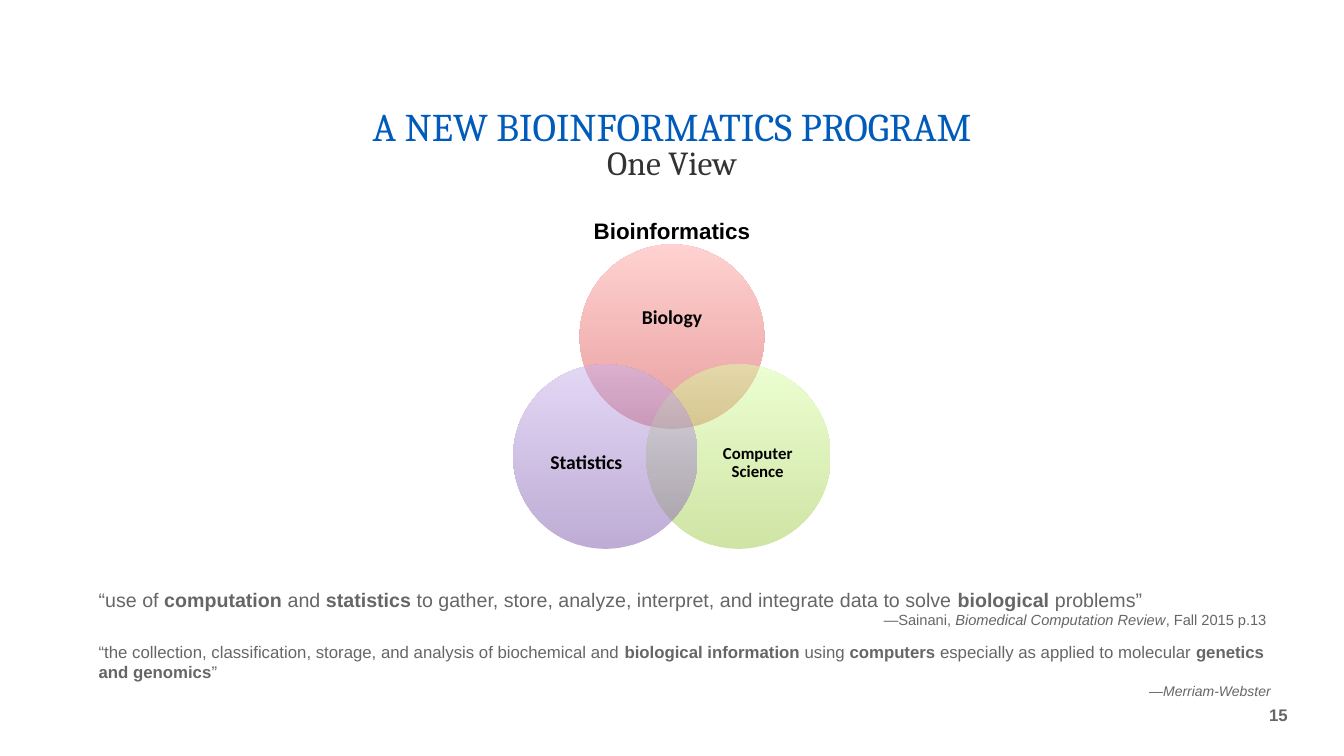
from lxml.etree import SubElement
from pptx import Presentation
from pptx.dml.color import RGBColor
from pptx.enum.shapes import MSO_SHAPE as SHAPE
from pptx.enum.text import MSO_ANCHOR as ANCHOR, PP_ALIGN as ALIGN
from pptx.oxml.ns import qn
from pptx.util import Inches, Pt

W, H = 13.33, 7.5
COLORS = {"title": "005BBB", "subtitle": "333333", "body": "666666", "black": "000000"}

# Content: a run is (text, style), style being "", "b" or "i"
TITLE = [("A NEW BIOINFORMATICS PROGRAM", 28, "title"), ("One View", 24, "subtitle")]
HEADING = "Bioinformatics"
PAGE = "15"
QUOTES = [
    # top, height, quote size, quote runs, source size, source runs
    (5.78, 0.52, 14,
     [("“use of ", ""), ("computation", "b"), (" and ", ""), ("statistics", "b"),
      (" to gather, store, analyze, interpret, and integrate data to solve ", ""),
      ("biological", "b"), (" problems”", "")],
     10.5,
     [("—Sainani, ", ""), ("Biomedical Computation Review", "i"), (", Fall 2015 p.13 ", "")]),
    (6.32, 0.68, 12,
     [("“the collection, classification, storage, and analysis of biochemical and ", ""),
      ("biological information", "b"), (" using ", ""), ("computers", "b"),
      (" especially as applied to molecular ", ""), ("genetics and genomics", "b"), ("”", "")],
     10,
     [("—Merriam-Webster", "i")]),
]
CIRCLES = [
    # column (-1 left, 0 middle, 1 right), row, bottom and top colours,
    # label, size, label shift from the centre, label width and height
    (0, 0, "D1403C", "FFA6A5", "Biology", 14, 0, -0.18, 0.95, 0.58),
    (1, 1, "A0CA4A", "DAFFA5", "Computer Science", 12, 0.19, 0.06, 0.78, 0.71),
    (-1, 1, "7F5BAB", "C8B0ED", "Statistics", 14, -0.19, 0.06, 0.78, 0.71),
]
DIAMETER, STEP_X, STEP_Y, VENN_Y = 1.83, 0.66, 1.19, 3.34

prs = Presentation()
prs.slide_width, prs.slide_height = Inches(W), Inches(H)
slide = prs.slides.add_slide(prs.slide_layouts[6])


def text_box(x, y, w, h, anchor=ANCHOR.TOP, inset=None):
    tf = slide.shapes.add_textbox(Inches(x), Inches(y), Inches(w), Inches(h)).text_frame
    tf.word_wrap = True
    tf.vertical_anchor = anchor
    if inset is not None:
        tf.margin_left = tf.margin_right = tf.margin_top = tf.margin_bottom = inset
    return tf


def write(p, runs, size, color, font="Arial", align=ALIGN.LEFT, spacing=None):
    p.alignment = align
    if spacing:
        p.line_spacing = spacing
    for text, style in runs:
        r = p.add_run()
        r.text = text
        r.font.name, r.font.size = font, Pt(size)
        r.font.bold, r.font.italic = style == "b", style == "i"
        r.font.color.rgb = RGBColor.from_string(COLORS[color])


def circle(cx, cy, bottom, top):
    sp = slide.shapes.add_shape(SHAPE.OVAL, Inches(cx - DIAMETER / 2), Inches(cy - DIAMETER / 2),
                                Inches(DIAMETER), Inches(DIAMETER))
    sp.shadow.inherit = False
    sp.line.fill.background()
    sp.fill.gradient()
    sp.fill.gradient_angle = 90
    for stop, color in zip(sp.fill.gradient_stops, (bottom, top)):
        stop.color.rgb = RGBColor.from_string(color)
    for color in sp.element.spPr.iter(qn("a:srgbClr")):
        SubElement(color, qn("a:alpha"), val="50000")


# Page number
tf = text_box(12.08, 6.8, 0.79, 0.58, ANCHOR.MIDDLE)
write(tf.paragraphs[0], [(PAGE, "b")], 12, "body", align=ALIGN.RIGHT)

# Quotes with their sources
for top, height, size, quote, source_size, source in QUOTES:
    tf = text_box(0.88, top, 11.82, height)
    write(tf.paragraphs[0], quote, size, "body")
    write(tf.add_paragraph(), source, source_size, "body", align=ALIGN.RIGHT)

# Venn diagram
tf = text_box(3.28, 2.11, 6.77, 0.37)
write(tf.paragraphs[0], [(HEADING, "b")], 16, "black", align=ALIGN.CENTER)
for col, row, bottom, top, label, size, dx, dy, w, h in CIRCLES:
    cx, cy = W / 2 + col * STEP_X, VENN_Y + row * STEP_Y
    circle(cx, cy, bottom, top)
    tf = text_box(cx + dx - w / 2, cy + dy - h / 2, w, h, ANCHOR.MIDDLE, inset=0)
    write(tf.paragraphs[0], [(label, "b")], size, "black", "Calibri", ALIGN.CENTER, 0.9)

# Title
tf = text_box(0, 1.06, W, 0.6)
for i, (text, size, color) in enumerate(TITLE):
    p = tf.add_paragraph() if i else tf.paragraphs[0]
    write(p, [(text, "")], size, color, "Cambria", ALIGN.CENTER, 0.8)

prs.save("out.pptx")
